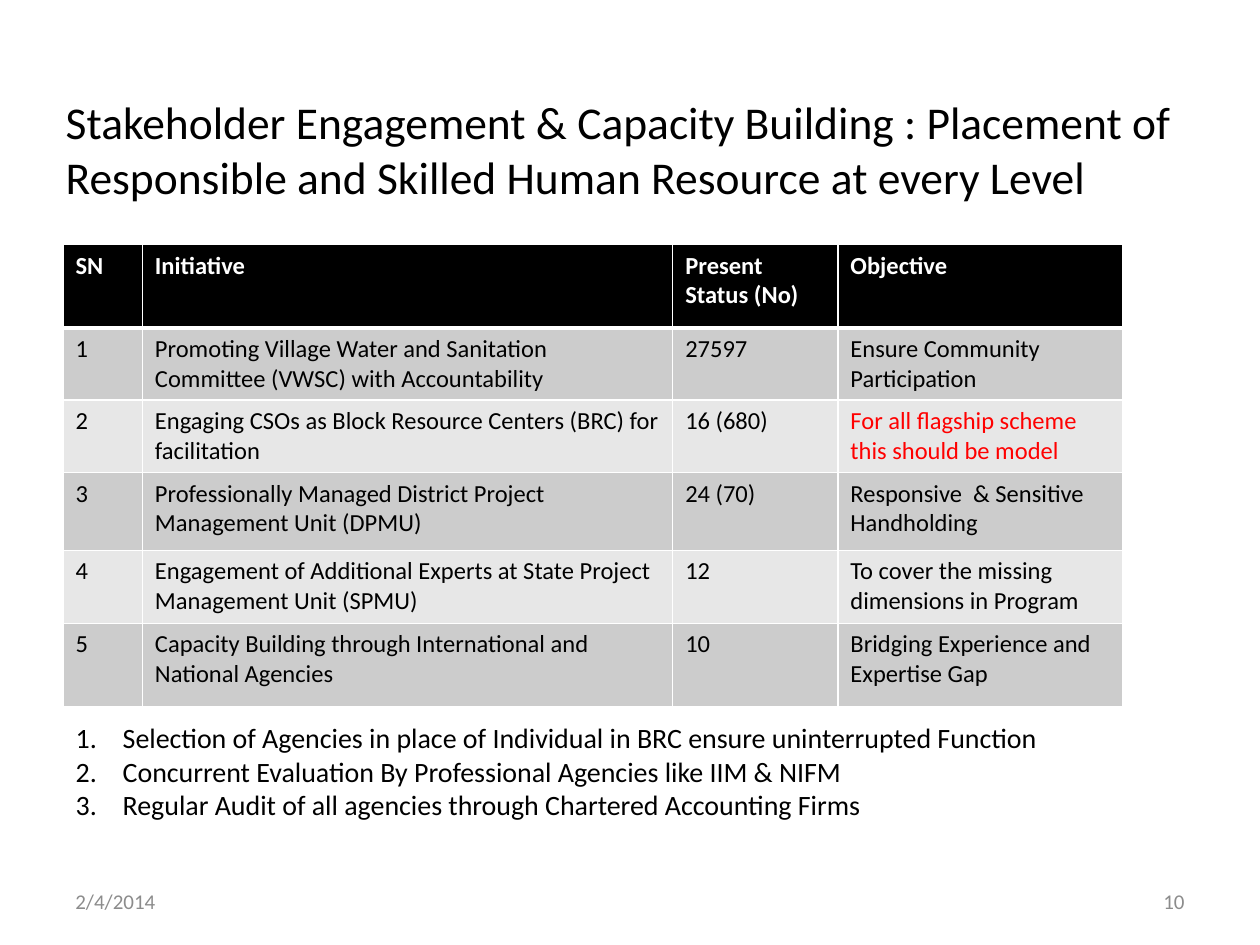
from lxml import etree
from pptx import Presentation
from pptx.dml.color import RGBColor
from pptx.enum import text
from pptx.oxml import ns
from pptx.util import Cm, Pt

BLACK = RGBColor(0x00, 0x00, 0x00)
WHITE = RGBColor(0xFF, 0xFF, 0xFF)
RED = RGBColor(0xFF, 0x00, 0x00)
FOOTER_GRAY = RGBColor(0x8C, 0x8C, 0x8C)
BANDS = (RGBColor(0xCC, 0xCC, 0xCC), RGBColor(0xE7, 0xE7, 0xE7))

HEADER = ("SN", "Initiative", "Present Status (No)", "Objective")
INITIATIVES = (
    ("Promoting Village Water and Sanitation Committee (VWSC) with Accountability",
     "27597", "Ensure Community Participation"),
    ("Engaging CSOs as Block Resource Centers (BRC) for facilitation",
     "16 (680)", "For all flagship scheme this should be model"),
    ("Professionally Managed District Project Management Unit (DPMU)",
     "24 (70)", "Responsive  & Sensitive Handholding"),
    ("Engagement of Additional Experts at State Project Management Unit (SPMU)",
     "12", "To cover the missing dimensions in Program"),
    ("Capacity Building through International and National Agencies",
     "10", "Bridging Experience and Expertise Gap"),
)
HIGHLIGHTED = (2, 3)  # row and column of the cell set in red
COLUMN_WIDTHS = (1.6, 10.69, 3.33, 5.74)
ROW_HEIGHTS = (1.68, 1.45, 1.45, 1.57, 1.47, 1.68)
MEASURES = (
    "Selection of Agencies in place of Individual in BRC ensure uninterrupted Function",
    "Concurrent Evaluation By Professional Agencies like IIM & NIFM",
    "Regular Audit of all agencies through Chartered Accounting Firms",
)


def write(paragraph, words, size, color, bold=False):
    run = paragraph.add_run()
    run.text = words
    for name, value in {"name": "Calibri", "size": Pt(size), "bold": bold}.items():
        setattr(run.font, name, value)
    run.font.color.rgb = color


def place(shape, box):
    for name, value in zip(("left", "top", "width", "height"), box):
        setattr(shape, name, Cm(value))


def format_frame(frame, anchor):
    settings = {"word_wrap": True, "auto_size": text.MSO_AUTO_SIZE.NONE,
                "vertical_anchor": anchor}
    for name, value in settings.items():
        setattr(frame, name, value)


def add_title(slide, box):
    title = slide.shapes.title
    place(title, box)
    format_frame(title.text_frame, text.MSO_ANCHOR.MIDDLE)
    heading = title.text_frame.paragraphs[0]
    heading.alignment = text.PP_ALIGN.LEFT
    write(heading, "Stakeholder Engagement & Capacity Building : Placement of "
                   "Responsible and Skilled Human Resource at every Level", 26, BLACK)


def set_borders(cell, bottom):
    properties = cell._tc.get_or_add_tcPr()
    for side, points in (("L", 1), ("R", 1), ("T", 1), ("B", bottom)):
        line = etree.SubElement(properties, ns.qn(f"a:ln{side}"), w=str(Pt(points)))
        fill = etree.SubElement(line, ns.qn("a:solidFill"))
        etree.SubElement(fill, ns.qn("a:srgbClr"), val=str(WHITE))


def add_initiatives_table(slide, box):
    rows = [HEADER] + [(str(n), *row) for n, row in enumerate(INITIATIVES, 1)]
    table = slide.shapes.add_table(len(rows), len(HEADER), *map(Cm, box)).table
    for column, width in zip(table.columns, COLUMN_WIDTHS):
        column.width = Cm(width)
    for r, (row, height) in enumerate(zip(rows, ROW_HEIGHTS)):
        table.rows[r].height = Cm(height)
        is_header = r == 0
        for c, words in enumerate(row):
            cell = table.cell(r, c)
            set_borders(cell, bottom=3 if is_header else 1)
            cell.fill.solid()
            cell.fill.fore_color.rgb = BLACK if is_header else BANDS[(r - 1) % 2]
            color = WHITE if is_header else RED if (r, c) == HIGHLIGHTED else BLACK
            write(cell.text_frame.paragraphs[0], words, 14, color, is_header)


def add_measures(slide, box):
    measures = slide.placeholders[1]
    place(measures, box)
    frame = measures.text_frame
    format_frame(frame, text.MSO_ANCHOR.TOP)
    for i, words in enumerate(MEASURES):
        item = frame.add_paragraph() if i else frame.paragraphs[0]
        properties = item._p.get_or_add_pPr()
        properties.set("marL", str(Cm(0.95)))
        properties.set("indent", str(-Cm(0.95)))
        etree.SubElement(properties, ns.qn("a:buFont"), typeface="+mj-lt")
        etree.SubElement(properties, ns.qn("a:buAutoNum"), type="arabicPeriod")
        item.space_before = Pt(0)
        write(item, words, 16, BLACK)


def add_footer(slide, box):
    left, top, width, height = box
    part_width = 5.92
    parts = (("2/4/2014", left, text.PP_ALIGN.LEFT),
             ("10", left + width - part_width, text.PP_ALIGN.RIGHT))
    for words, x, alignment in parts:
        part = slide.shapes.add_textbox(*map(Cm, (x, top, part_width, height)))
        format_frame(part.text_frame, text.MSO_ANCHOR.MIDDLE)
        line = part.text_frame.paragraphs[0]
        line.alignment = alignment
        write(line, words, 12, FOOTER_GRAY)


def main():
    deck = Presentation()
    deck.slide_width, deck.slide_height = Cm(25.4), Cm(19.05)
    slide = deck.slides.add_slide(deck.slide_layouts[1])
    # Heading
    add_title(slide, (1.07, 1.98, 22.86, 2.03))
    # Initiatives with their status and objective
    add_initiatives_table(slide, (1.27, 4.93, sum(COLUMN_WIDTHS), sum(ROW_HEIGHTS)))
    # Numbered measures below the table
    add_measures(slide, (1.27, 14.4, 21.39, 2.31))
    # Date and slide number
    add_footer(slide, (1.27, 17.65, 22.86, 1.02))
    deck.save("out.pptx")


if __name__ == "__main__":
    main()
